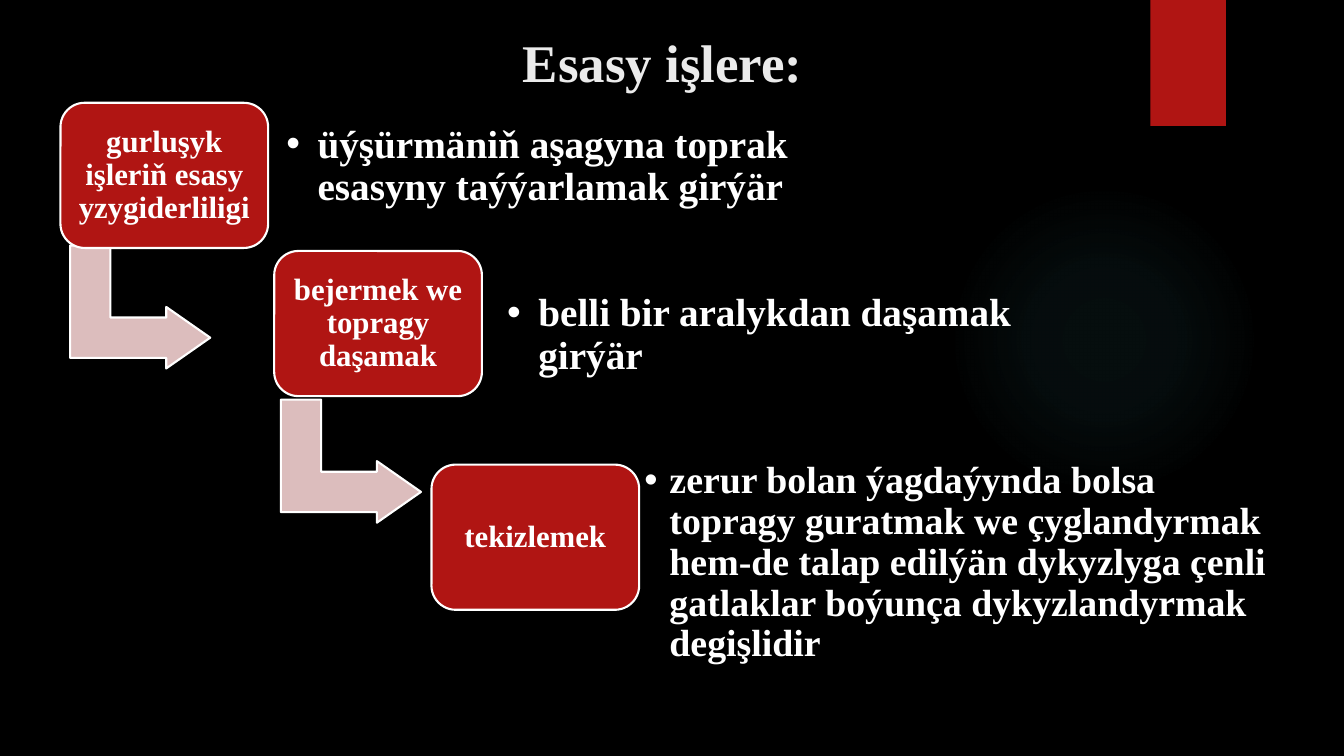
from lxml.etree import SubElement
from pptx import Presentation
from pptx.dml.color import RGBColor
from pptx.enum.shapes import MSO_SHAPE
from pptx.enum.text import MSO_ANCHOR, MSO_AUTO_SIZE, PP_ALIGN
from pptx.oxml import parse_xml
from pptx.oxml.ns import qn
from pptx.util import Inches, Pt

STEPS = [
    ("gurluşyk işleriň esasy yzygiderliligi", (0.6, 1.02), (0.78, 2.35),
     "üýşürmäniň aşagyna toprak esasyny taýýarlamak girýär",
     (2.72, 1.07, 6.4, 1.17), 28, 0.31, 0.12),
    ("bejermek we topragy daşamak", (2.72, 2.49), (2.87, 3.88),
     "belli bir aralykdan daşamak girýär",
     (4.91, 2.74, 5.61, 1.17), 28, 0.31, 0.12),
    ("tekizlemek", (4.28, 4.61), None,
     "zerur bolan ýagdaýynda bolsa topragy guratmak we çyglandyrmak "
     "hem-de talap edilýän dykyzlyga çenli gatlaklar boýunça "
     "dykyzlandyrmak degişlidir",
     (6.24, 4.25, 6.7, 2.67), 27, 0.25, 0.15),
]


def paint(color, tone):
    color.rgb = RGBColor.from_string(tone)


def write(shape, text, size, tone="FFFFFF", align=PP_ALIGN.CENTER,
          inset=0.09, top=None, anchor=MSO_ANCHOR.MIDDLE, lines=0.9, hang=0):
    frame = shape.text_frame
    frame.text = text
    frame.word_wrap = True
    frame.auto_size = MSO_AUTO_SIZE.NONE
    frame.vertical_anchor = anchor
    frame.margin_left = frame.margin_right = frame.margin_bottom = Inches(inset)
    frame.margin_top = Inches(inset if top is None else top)
    para = frame.paragraphs[0]
    if hang:
        props = para._p.get_or_add_pPr()
        props.set("marL", str(Inches(hang)))
        props.set("indent", str(-Inches(hang)))
        SubElement(props, qn("a:buChar"), char="•")
    para.alignment = align
    para.line_spacing = lines
    para.space_before = Pt(0)
    font = para.runs[0].font
    font.name = "Times New Roman"
    font.size = Pt(size)
    font.bold = True
    paint(font.color, tone)


class Deck:
    red, pink, white = "B01513", "DCBDBD", "FFFFFF"

    def __init__(self):
        self.show = Presentation()
        self.show.slide_width = Inches(13.33)
        self.show.slide_height = Inches(7.5)
        self.slide = self.show.slides.add_slide(self.show.slide_layouts[4])
        ground = self.slide.background.fill
        ground.solid()
        paint(ground.fore_color, "000000")
        self.title, *self.slots = self.slide.placeholders

    def shape(self, kind, area, fill, edge=None, bends=()):
        item = self.slide.shapes.add_shape(kind, *map(Inches, area))
        item.shadow.inherit = False
        item.fill.solid()
        paint(item.fill.fore_color, fill)
        if edge:
            paint(item.line.color, edge)
            item.line.width = Pt(1.5)
        else:
            item.line.fill.background()
        for spot, bend in enumerate(bends):
            item.adjustments[spot] = bend
        return item

    def glow(self, area, tone, stops):
        item = self.shape(MSO_SHAPE.OVAL, area, tone)
        marks = "".join(
            f'<a:gs pos="{at * 1000}"><a:srgbClr val="{tone}">'
            f'<a:alpha val="{alpha * 1000}"/></a:srgbClr></a:gs>'
            for at, alpha in stops)
        props = item._element.spPr
        solid = props.find(qn("a:solidFill"))
        props.replace(solid, parse_xml(
            '<a:gradFill xmlns:a="http://schemas.openxmlformats.org/drawingml/2006/main">'
            f'<a:gsLst>{marks}</a:gsLst><a:path path="circle">'
            '<a:fillToRect l="50000" t="50000" r="50000" b="50000"/>'
            '</a:path></a:gradFill>'))

    def place(self, slot, area):
        slot.left, slot.top, slot.width, slot.height = map(Inches, area)
        slot._element.getparent().append(slot._element)
        return slot

    def head(self, text, area):
        write(self.place(self.title, area), text, 37.8, "EBEBEB",
              inset=0.05, top=0.12, anchor=MSO_ANCHOR.TOP, lines=1.0)

    def arrow(self, spot):
        item = self.shape(MSO_SHAPE.BENT_UP_ARROW, (*spot, 1.22, 1.39),
                          self.pink, self.white, (0.328, 0.25, 0.358))
        item.rotation = 90

    def box(self, text, spot):
        item = self.shape(MSO_SHAPE.ROUNDED_RECTANGLE, (*spot, 2.06, 1.44),
                          self.red, self.white, (0.167,))
        write(item, text, 22)

    def list(self, text, area, size, hang, inset):
        write(self.place(self.slots.pop(0), area), text, size,
              align=PP_ALIGN.LEFT, inset=inset, hang=hang)

    def save(self):
        for slot in self.slots:
            slot._element.getparent().remove(slot._element)
        self.show.save("out.pptx")


def main():
    deck = Deck()
    deck.glow((9.41, 1.83, 3.08, 3.08), "50B9C1",
              [(0, 7), (36, 6), (69, 0), (100, 0)])
    deck.shape(MSO_SHAPE.RECTANGLE, (11.41, 0, 0.75, 1.25), deck.red)
    deck.head("Esasy işlere:", (1.7, 0.17, 9.75, 0.67))
    for name, spot, bend, text, area, size, hang, inset in STEPS:
        if bend:
            deck.arrow(bend)
        deck.box(name, spot)
        deck.list(text, area, size, hang, inset)
    deck.save()


if __name__ == "__main__":
    main()
